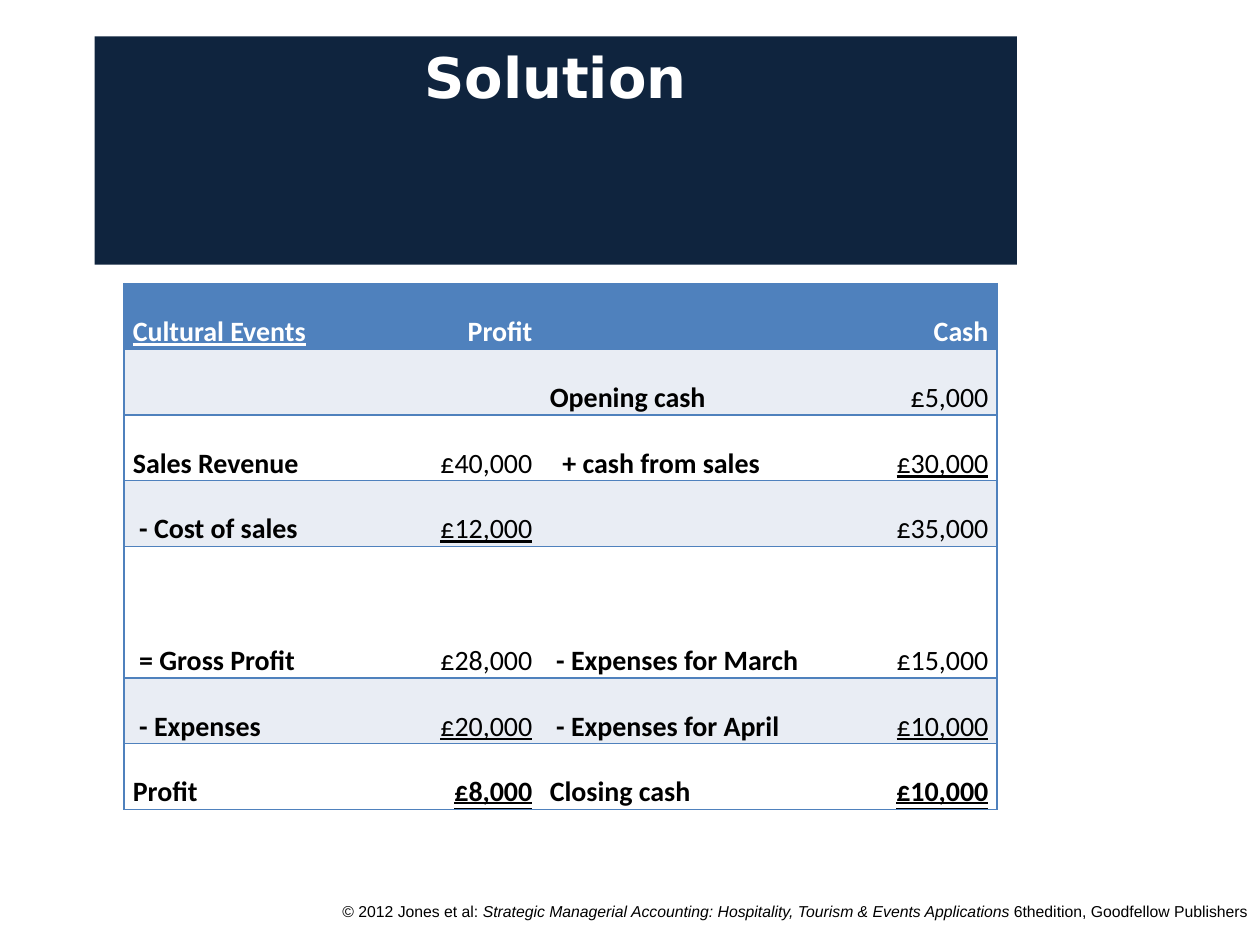
from collections import namedtuple
from dataclasses import dataclass

from lxml.etree import SubElement
from pptx import Presentation
from pptx.dml.color import RGBColor
from pptx.enum.text import MSO_ANCHOR as Anchor, MSO_AUTO_SIZE as AutoSize
from pptx.enum.text import MSO_UNDERLINE as Underline, PP_ALIGN as Align
from pptx.oxml.ns import qn
from pptx.util import Inches, Pt

Box = namedtuple("Box", "left top width height")


@dataclass(frozen=True)
class Theme:
    navy: str = "0F243E"
    blue: str = "4F81BD"
    pale: str = "E9EDF4"
    white: str = "FFFFFF"
    black: str = "000000"
    title_font: str = "DejaVu Sans"
    table_font: str = "Calibri"
    footer_font: str = "Arial"
    title_size: int = 32
    table_size: int = 16
    footer_size: int = 9
    border: int = 1


THEME = Theme()
SINGLE, DOUBLE = Underline.SINGLE_LINE, Underline.DOUBLE_LINE
COLUMN_SHARES = (1.89, 1.42, 2.36, 1.26)
ROW_SHARES = (1, 1, 1, 1, 2, 1, 1)
INSET, INDENT = Inches(0.07), Inches(0.05)

ROWS = (
    ("Cultural Events", "Profit", "", "Cash"),
    ("", "", "Opening cash", "£5,000"),
    ("Sales Revenue", "£40,000", "+ cash from sales", "£30,000"),
    ("- Cost of sales", "£12,000", "", "£35,000"),
    ("= Gross Profit", "£28,000", "- Expenses for March", "£15,000"),
    ("- Expenses", "£20,000", "- Expenses for April", "£10,000"),
    ("Profit", "£8,000", "Closing cash", "£10,000"),
)
UNDERLINES = {(0, 0): SINGLE, (2, 3): SINGLE, (3, 1): SINGLE, (5, 1): SINGLE,
              (5, 3): SINGLE, (6, 1): DOUBLE, (6, 3): DOUBLE}
INDENT_LEVELS = {"-": 1, "=": 1, "+": 2}
FOOTER = (
    ("© 2012 Jones et al: ", False),
    ("Strategic Managerial Accounting: Hospitality, Tourism & Events Applications ", True),
    ("6thedition, Goodfellow Publishers", False),
)


def add_text(paragraph, text, *, font, size, color, bold=False, italic=False,
             underline=None, align=Align.LEFT, spacing=1.0):
    paragraph.alignment = align
    paragraph.line_spacing = spacing
    run = paragraph.add_run()
    run.text = text
    run.font.name, run.font.size = font, Pt(size)
    run.font.bold, run.font.italic = bold, italic
    run.font.underline = underline
    run.font.color.rgb = RGBColor.from_string(color)


def fill_solid(target, color):
    target.fill.solid()
    target.fill.fore_color.rgb = RGBColor.from_string(color)


def set_borders(cell, visible_sides):
    properties = cell._tc.get_or_add_tcPr()
    for side in "LRTB":
        line = SubElement(properties, qn(f"a:ln{side}"), w=str(Pt(THEME.border)))
        if side in visible_sides:
            solid = SubElement(line, qn("a:solidFill"))
            SubElement(solid, qn("a:srgbClr"), val=THEME.blue)
        else:
            SubElement(line, qn("a:noFill"))


def place_title(slide, box):
    title = slide.shapes.title
    title.left, title.top, title.width, title.height = box
    fill_solid(title, THEME.navy)
    frame = title.text_frame
    frame.auto_size, frame.word_wrap = AutoSize.NONE, True
    frame.vertical_anchor = Anchor.TOP
    add_text(frame.paragraphs[0], "Solution", font=THEME.title_font,
             size=THEME.title_size, color=THEME.white, bold=True, align=Align.CENTER)


def format_cell(cell, row, column, text):
    is_header, is_amount = row == 0, column % 2 == 1
    sides = "TB" + {0: "L", len(COLUMN_SHARES) - 1: "R"}.get(column, "")
    set_borders(cell, sides)
    banded = THEME.pale if row % 2 else THEME.white
    fill_solid(cell, THEME.blue if is_header else banded)
    cell.vertical_anchor = Anchor.BOTTOM
    cell.margin_left = INSET + INDENT * INDENT_LEVELS.get(text[:1], 0)
    cell.margin_right = INSET
    cell.margin_top = cell.margin_bottom = 0
    if text:
        add_text(cell.text_frame.paragraphs[0], text, font=THEME.table_font,
                 size=THEME.table_size, color=THEME.white if is_header else THEME.black,
                 bold=is_header or not is_amount or row == len(ROWS) - 1,
                 underline=UNDERLINES.get((row, column)),
                 align=Align.RIGHT if is_amount else Align.LEFT, spacing=1.15)


def place_table(slide, box):
    table = slide.shapes.add_table(len(ROWS), len(COLUMN_SHARES), *box).table
    for column, share in zip(table.columns, COLUMN_SHARES):
        column.width = int(box.width * share / sum(COLUMN_SHARES))
    for row, share in zip(table.rows, ROW_SHARES):
        row.height = int(box.height * share / sum(ROW_SHARES))
    for row, texts in enumerate(ROWS):
        for column, text in enumerate(texts):
            format_cell(table.cell(row, column), row, column, text)


def place_footer(slide, box):
    frame = slide.shapes.add_textbox(*box).text_frame
    frame.word_wrap = True
    for text, italic in FOOTER:
        add_text(frame.paragraphs[0], text, font=THEME.footer_font,
                 size=THEME.footer_size, color=THEME.black, italic=italic,
                 align=Align.RIGHT)


def main():
    presentation = Presentation()
    presentation.slide_width, presentation.slide_height = Inches(10), Inches(7.5)
    slide = presentation.slides.add_slide(presentation.slide_layouts[5])

    def percent_box(left, top, width, height):
        across, down = presentation.slide_width / 100, presentation.slide_height / 100
        return Box(int(left * across), int(top * down),
                   int(width * across), int(height * down))

    place_footer(slide, percent_box(22.3, 94.8, 77.7, 5.2))
    place_title(slide, percent_box(7.5, 3.85, 73.2, 24.15))
    place_table(slide, percent_box(9.85, 30, 69.3, 55.65))
    presentation.save("out.pptx")


if __name__ == "__main__":
    main()
